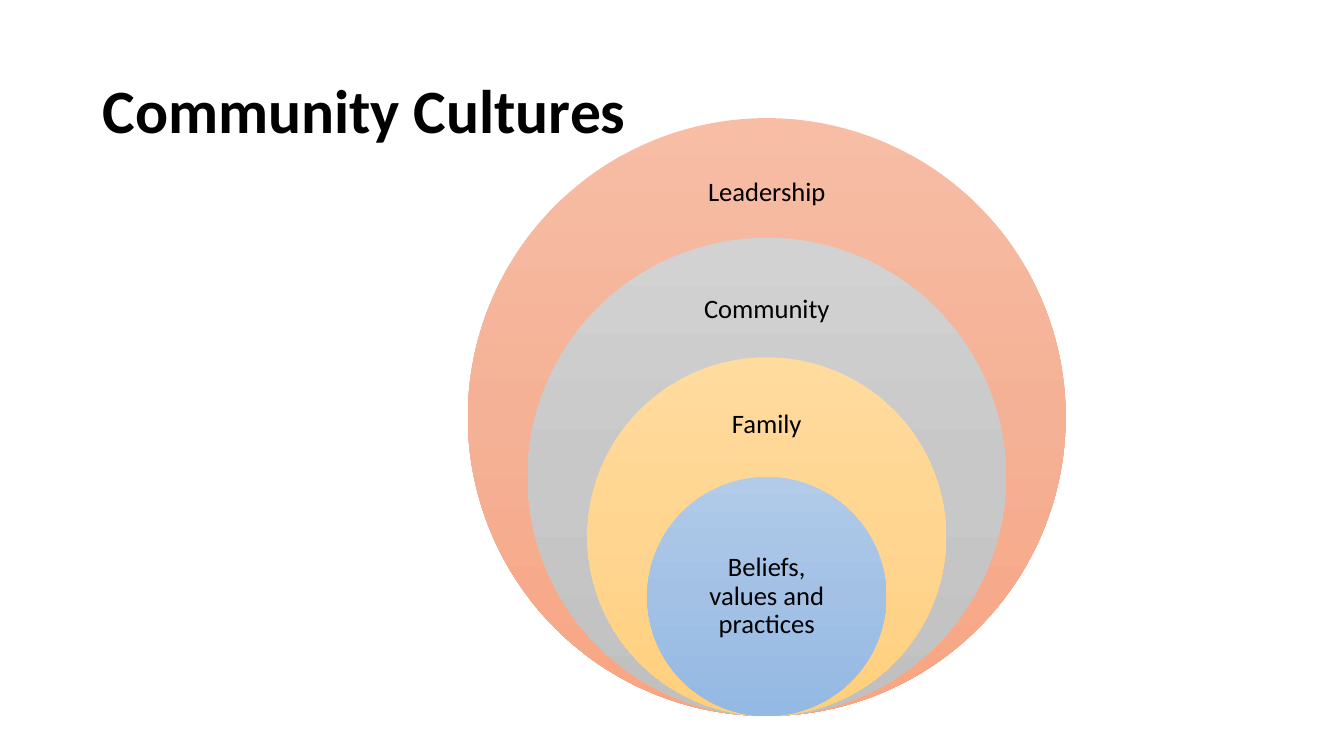
import copy

import pptx
import pptx.dml.color
import pptx.enum.shapes
import pptx.enum.text
import pptx.util

Pt = pptx.util.Pt
RGB = pptx.dml.color.RGBColor
ALIGN = pptx.enum.text.PP_ALIGN
MIDDLE = pptx.enum.text.MSO_ANCHOR.MIDDLE

BLACK = RGB(0x00, 0x00, 0x00)
CORAL = RGB(0xF7, 0xBD, 0xA5), RGB(0xF5, 0xB1, 0x96), RGB(0xF8, 0xA5, 0x82)
GRAY = RGB(0xD2, 0xD2, 0xD2), RGB(0xC8, 0xC8, 0xC8), RGB(0xC0, 0xC0, 0xC0)
GOLD = RGB(0xFF, 0xDB, 0x9E), RGB(0xFF, 0xD5, 0x90), RGB(0xFF, 0xD0, 0x7C)
BLUE = RGB(0xB1, 0xCB, 0xE9), RGB(0xA3, 0xC1, 0xE5), RGB(0x93, 0xB9, 0xE4)

CENTER, BASE = 547.7, 511.4
OUTER = 427
LABEL = 119.8

# Text, colours, then label top and height as shares of the diameter
RINGS = [
    ("Leadership", CORAL, 0.05, 0.15),
    ("Community", GRAY, 0.06, 0.18),
    ("Family", GOLD, 0.075, 0.225),
    ("Beliefs, values and practices", BLUE, 0.25, 0.5),
]

TITLE = {"size": Pt(44), "bold": True, "name": "Calibri"}
BODY = {"size": Pt(19), "bold": False, "name": "Calibri"}
INSET = {f"margin_{side}": Pt(10.8)
         for side in ("left", "top", "right", "bottom")}


def apply(target, values):
    for name, value in values.items():
        setattr(target, name, value)


def write(shape, text, font, align):
    frame = shape.text_frame
    frame.text = text
    apply(frame, {"word_wrap": True, "vertical_anchor": MIDDLE,
                  "auto_size": pptx.enum.text.MSO_AUTO_SIZE.NONE})
    line = frame.paragraphs[0]
    apply(line, {"alignment": align, "line_spacing": 0.9})
    apply(line.runs[0].font, font)
    line.runs[0].font.color.rgb = BLACK


def shade(fill, colors):
    """Fill with evenly spaced colours from top to bottom."""
    fill.gradient()
    fill.gradient_angle = 270
    stops = fill._fill._gradFill.gsLst
    stops.insert(1, copy.deepcopy(stops[0]))
    for i, (stop, color) in enumerate(zip(fill.gradient_stops, colors)):
        stop.position = i / (len(colors) - 1)
        stop.color.rgb = color


def add_title(slide, text):
    title = slide.shapes.title
    apply(title, {"left": Pt(66), "top": Pt(28.8),
                  "width": Pt(828), "height": Pt(104.4)})
    write(title, text, TITLE, ALIGN.LEFT)


def add_ring(shapes, size, text, colors, drop, depth):
    top = BASE - size
    ring = shapes.add_shape(pptx.enum.shapes.MSO_SHAPE.OVAL,
                            Pt(CENTER - size / 2), Pt(top),
                            Pt(size), Pt(size))
    ring.shadow.inherit = False
    ring.line.fill.background()
    shade(ring.fill, colors)

    label = shapes.add_textbox(Pt(CENTER - LABEL / 2), Pt(top + drop * size),
                               Pt(LABEL), Pt(depth * size))
    apply(label.text_frame, INSET)
    write(label, text, BODY, ALIGN.CENTER)


def main():
    deck = pptx.Presentation()
    apply(deck, {"slide_width": Pt(960), "slide_height": Pt(540)})
    slide = deck.slides.add_slide(deck.slide_layouts[5])
    add_title(slide, "Community Cultures")
    group = slide.shapes.add_group_shape()
    for i, ring in enumerate(RINGS):
        add_ring(group.shapes, OUTER * (1 - i / 5), *ring)
    deck.save("out.pptx")


if __name__ == "__main__":
    main()
